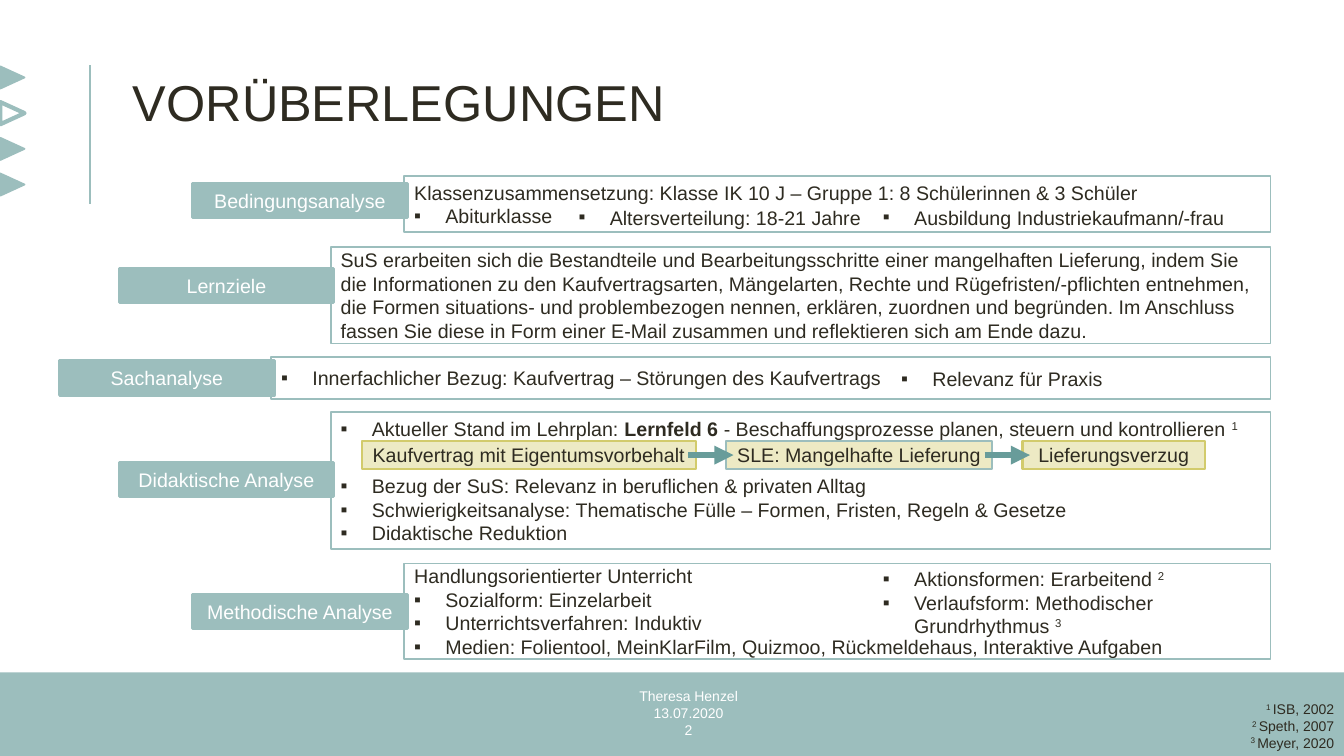
from dataclasses import dataclass

import lxml.etree
import pptx
import pptx.dml.color
import pptx.enum.shapes
import pptx.enum.text
import pptx.oxml.ns
import pptx.util

SHAPE = pptx.enum.shapes.MSO_SHAPE
ALIGN = pptx.enum.text.PP_ALIGN
ANCHOR = pptx.enum.text.MSO_ANCHOR
SLIDE_WIDTH, SLIDE_HEIGHT = pptx.util.Inches(13.33), pptx.util.Inches(7.5)
COLUMN, ROW = SLIDE_WIDTH / 100, SLIDE_HEIGHT / 100


@dataclass(frozen=True)
class Theme:
    """Colours, font and type sizes of the slide."""
    font: str = "Arial"
    ink: str = "2E2B21"
    white: str = "FFFFFF"
    teal: str = "9CBEBD"
    dark_teal: str = "689C9A"
    sand: str = "EDEAC4"
    olive: str = "D2CB6C"
    title: int = 36
    body: int = 14
    small: int = 10


THEME = Theme()


@dataclass(frozen=True)
class Box:
    """A rectangle in columns and rows of a 100 by 100 grid."""
    left: float
    top: float
    width: float
    height: float

    def inner(self, column, row, width, height):
        """Return a box offset from this one's top left corner."""
        return Box(self.left + column, self.top + row, width, height)

    def emu(self):
        """Return left, top, width and height for python-pptx."""
        return (round(self.left * COLUMN), round(self.top * ROW),
                round(self.width * COLUMN), round(self.height * ROW))


@dataclass(frozen=True)
class Run:
    """A stretch of text that is bold or raised."""
    text: str
    bold: bool = False
    raised: bool = False


@dataclass(frozen=True)
class Line:
    """A paragraph made of runs, with an optional bullet and gap above."""
    runs: tuple
    bullet: bool = False
    gap: int = 0


def plain(*runs):
    """Return a paragraph without a bullet."""
    return Line(tuple(runs))


def bullet(*runs, gap=0):
    """Return a bulleted paragraph."""
    return Line(tuple(runs), True, gap)


def note(number):
    """Return a raised footnote number."""
    return Run(number, raised=True)


def rgb(colour):
    """Turn a hex string into a colour."""
    return pptx.dml.color.RGBColor.from_string(colour)


def add_bullet(paragraph):
    """Give a paragraph a hanging square bullet."""
    properties = paragraph._p.get_or_add_pPr()
    indent = pptx.util.Inches(0.31)
    properties.set("marL", str(indent))
    properties.set("indent", str(-indent))
    for tag, name, value in (("a:buFont", "typeface", THEME.font), ("a:buChar", "char", "▪")):
        lxml.etree.SubElement(properties, pptx.oxml.ns.qn(tag)).set(name, value)


def write(shape, lines, size=THEME.body, colour=THEME.ink, align=ALIGN.LEFT,
          anchor=ANCHOR.MIDDLE, wrap=True):
    """Fill a shape with paragraphs."""
    frame = shape.text_frame
    frame.word_wrap = wrap
    frame.vertical_anchor = anchor
    for index, line in enumerate(lines):
        paragraph = frame.add_paragraph() if index else frame.paragraphs[0]
        if line.bullet:
            add_bullet(paragraph)
        paragraph.alignment = align
        if line.gap:
            paragraph.space_before = pptx.util.Pt(line.gap)
        paragraph.font.name = THEME.font
        paragraph.font.size = pptx.util.Pt(size)
        paragraph.font.color.rgb = rgb(colour)
        for stretch in line.runs:
            stretch = stretch if isinstance(stretch, Run) else Run(stretch)
            run = paragraph.add_run()
            run.text = stretch.text
            if stretch.bold:
                run.font.bold = True
            if stretch.raised:
                run._r.get_or_add_rPr().set("baseline", "30000")


def add_text(slide, box, lines, **style):
    """Place a text box."""
    write(slide.shapes.add_textbox(*box.emu()), lines, **style)


def add_panel(slide, box, fill, outline=None, weight=1.25, kind=SHAPE.RECTANGLE):
    """Place a filled shape and return it."""
    panel = slide.shapes.add_shape(kind, *box.emu())
    panel.shadow.inherit = False
    panel.fill.solid()
    panel.fill.fore_color.rgb = rgb(fill)
    if outline:
        panel.line.color.rgb = rgb(outline)
        panel.line.width = pptx.util.Pt(weight)
    else:
        panel.line.fill.background()
    return panel


def add_rule(slide, start, end, colour, weight, arrow=False):
    """Draw a straight line between two grid points."""
    points = [round(value * unit) for point in (start, end)
              for value, unit in zip(point, (COLUMN, ROW))]
    rule = slide.shapes.add_connector(pptx.enum.shapes.MSO_CONNECTOR.STRAIGHT, *points)
    rule.line.color.rgb = rgb(colour)
    rule.line.width = pptx.util.Pt(weight)
    if arrow:
        outline = rule.line._get_or_add_ln()
        lxml.etree.SubElement(outline, pptx.oxml.ns.qn("a:tailEnd")).set("type", "triangle")
    lxml.etree.SubElement(rule._element.spPr, pptx.oxml.ns.qn("a:effectLst"))


def add_header(slide, box):
    """Place the triangles, the upright rule and the title."""
    for index in range(4):
        hollow = index == 1
        triangle = add_panel(slide, box.inner(0.1, 0.1 + 4.72 * index, 1.65, 3.2),
                             THEME.white if hollow else THEME.teal, THEME.teal,
                             3 if hollow else 1.25, SHAPE.ISOSCELES_TRIANGLE)
        triangle.rotation = 90
    add_rule(slide, (box.left + 6.68, box.top + box.height),
             (box.left + 6.68, box.top), THEME.teal, 1.5)
    add_text(slide, box.inner(9.15, 0.2, 86.1, 14.5), [plain("VORÜBERLEGUNGEN")],
             size=THEME.title, anchor=ANCHOR.TOP)


def add_section(slide, box, label, label_row, lines, asides=(), anchor=ANCHOR.MIDDLE):
    """Place a framed section with its label and side texts."""
    write(add_panel(slide, box, THEME.white, THEME.teal), lines, anchor=anchor)
    tag = add_panel(slide, box.inner(-15.75, label_row, 15.98, 4.53), THEME.teal, THEME.teal, 2.25)
    write(tag, [plain(label)], colour=THEME.white, align=ALIGN.CENTER)
    for place, aside in asides:
        add_text(slide, box.inner(*place), aside)


def add_topic_chain(slide, box, topics):
    """Place the topics in a row, linked by arrows."""
    chips = [box.inner(column, 0, width, box.height) for column, width, _, _ in topics]
    for chip, (_, _, outline, topic) in zip(chips, topics):
        write(add_panel(slide, chip, THEME.sand, outline, 1.5), [plain(topic)],
              align=ALIGN.CENTER, wrap=False)
    middle = box.top + box.height / 2
    for before, after in zip(chips, chips[1:]):
        add_rule(slide, (before.left + before.width - 0.55, middle),
                 (after.left + 0.55, middle), THEME.dark_teal, 4.5, arrow=True)


def add_footer(slide, box):
    """Place the footer band, author details and sources."""
    add_panel(slide, box, THEME.teal)
    add_text(slide, box.inner(33.08, 2.27, 36.3, 6.13),
             [plain(text) for text in ("Theresa Henzel", "13.07.2020", "2")],
             size=THEME.small, colour=THEME.white, align=ALIGN.CENTER)
    sources = ("ISB, 2002", "Speth, 2007", "Meyer, 2020")
    add_text(slide, box.inner(55.5, 3.07, 44.5, 8),
             [plain(note(f"{number} "), source) for number, source in enumerate(sources, 1)],
             size=THEME.small, align=ALIGN.RIGHT, anchor=ANCHOR.TOP)


def add_analysis(slide, box):
    """Place the five analysis sections, all ending at the box's right edge."""
    def row(column, top, height):
        """Return a box that runs from a column to the right edge."""
        return box.inner(column, top, box.width - column, height)

    add_section(slide, row(25.65, 0, 7.33), "Bedingungsanalyse", 0.93, [
        plain("Klassenzusammensetzung: Klasse IK 10 J – Gruppe 1: 8 Schülerinnen & 3 Schüler"),
        bullet("Abiturklasse")], [
        ((12.23, 2.93, 27.08, 4.93), [bullet("Altersverteilung: 18-21 Jahre")]),
        ((34.88, 2.93, 27.08, 4.93), [bullet("Ausbildung Industriekaufmann/-frau")])])
    add_section(slide, row(20.18, 9.33, 12.8), "Lernziele", 2.8, [plain(
        "SuS erarbeiten sich die Bestandteile und Bearbeitungsschritte einer mangelhaften "
        "Lieferung, indem Sie die Informationen zu den Kaufvertragsarten, Mängelarten, Rechte "
        "und Rügefristen/-pflichten entnehmen, die Formen situations- und problembezogen nennen, "
        "erklären, zuordnen und begründen. Im Anschluss fassen Sie diese in Form einer E-Mail "
        "zusammen und reflektieren sich am Ende dazu.")])
    add_section(slide, row(15.75, 23.87, 5.6), "Sachanalyse", 0.53, [
        bullet("Innerfachlicher Bezug: Kaufvertrag – Störungen des Kaufvertrags")], [
        ((46.13, 0.4, 27.08, 4.93), [bullet("Relevanz für Praxis")])])
    didactics = row(20.18, 31.2, 18.13)
    add_section(slide, didactics, "Didaktische Analyse", 6.67, [
        bullet("Aktueller Stand im Lehrplan: ", Run("Lernfeld 6", bold=True),
               " - Beschaffungsprozesse planen, steuern und kontrollieren ", note("1")),
        bullet("Bezug der SuS: Relevanz in beruflichen & privaten Alltag", gap=24),
        bullet("Schwierigkeitsanalyse: Thematische Fülle – Formen, Fristen, Regeln & Gesetze"),
        bullet("Didaktische Reduktion")], anchor=ANCHOR.TOP)
    add_topic_chain(slide, didactics.inner(2.33, 3.8, 62.7, 3.73), [
        (0, 24.83, THEME.olive, "Kaufvertrag mit Eigentumsvorbehalt"),
        (27.08, 19.8, THEME.teal, "SLE: Mangelhafte Lieferung"),
        (49.14, 13.58, THEME.olive, "Lieferungsverzug")])
    add_section(slide, row(25.65, 51.2, 12.67), "Methodische Analyse", 4.13, [
        plain("Handlungsorientierter Unterricht"), bullet("Sozialform: Einzelarbeit"),
        bullet("Unterrichtsverfahren: Induktiv"),
        bullet("Medien: Folientool, MeinKlarFilm, Quizmoo, Rückmeldehaus, Interaktive Aufgaben")], [
        ((34.88, -0.13, 28.8, 10.53), [
            bullet("Aktionsformen: Erarbeitend ", note("2")),
            bullet("Verlaufsform: Methodischer Grundrhythmus ", note("3"))])])


def main():
    """Build and save the slide."""
    deck = pptx.Presentation()
    deck.slide_width, deck.slide_height = SLIDE_WIDTH, SLIDE_HEIGHT
    slide = deck.slides.add_slide(deck.slide_layouts[6])
    add_header(slide, Box(0, 8.55, 100, 18.4))
    add_footer(slide, Box(0, 88.93, 100, 11.07))
    add_analysis(slide, Box(4.43, 23.33, 90.1, 63.87))
    deck.save("out.pptx")


if __name__ == "__main__":
    main()
